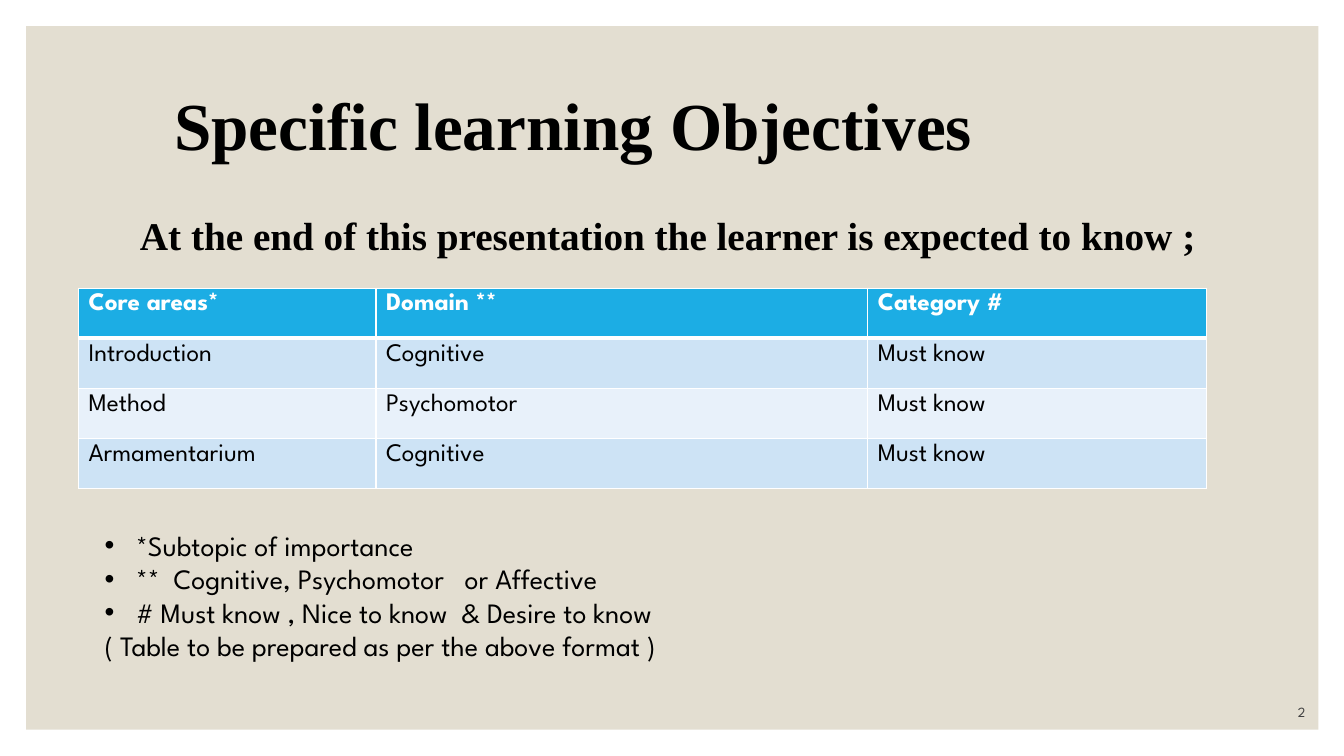
from pptx import Presentation
from pptx import util as u
from pptx.dml.color import RGBColor
from pptx.enum import shapes, text
from pptx.oxml import parse_xml
from pptx.oxml.ns import nsdecls

BLACK, WHITE = "000000", "FFFFFF"
SERIF, SANS = "Times New Roman", "League Spartan"


def colour(value):
    return RGBColor.from_string(value)


def write(para, wording, size=18, font=SANS, ink=BLACK, bold=False):
    span = para.add_run()
    span.text = wording
    span.font.size = u.Pt(size)
    span.font.name = font
    span.font.bold = bold
    span.font.color.rgb = colour(ink)


class Page:
    """Holds the table style and the current slide."""

    header_fill = "1CADE4"
    band_fills = ("CDE3F5", "E8F1FA")
    thin, thick = 1, 3

    def __init__(self, deck):
        self.slide = deck.slides.add_slide(deck.slide_layouts[6])

    def panel(self, left, top, width, height, fill):
        box = self.slide.shapes.add_shape(
            shapes.MSO_SHAPE.RECTANGLE, *map(u.Pt, (left, top, width, height)))
        box.shadow.inherit = False
        box.fill.solid()
        box.fill.fore_color.rgb = colour(fill)
        box.line.fill.background()

    def words(self, left, top, width, height, lines, bullets=0,
              anchor=text.MSO_ANCHOR.TOP, align=text.PP_ALIGN.LEFT,
              spacing=None, **style):
        box = self.slide.shapes.add_textbox(*map(u.Pt, (left, top, width, height)))
        frame = box.text_frame
        frame.word_wrap = True
        frame.vertical_anchor = anchor
        for number, line in enumerate(lines):
            para = frame.add_paragraph() if number else frame.paragraphs[0]
            para.alignment = align
            para.line_spacing = spacing
            write(para, line, **style)
            if number < bullets:
                self.bullet(para)

    def bullet(self, para, indent=22.5):
        properties = para._p.get_or_add_pPr()
        properties.set("marL", str(u.Pt(indent)))
        properties.set("indent", str(-u.Pt(indent)))
        for mark in ('a:buFont {} typeface="Arial"', 'a:buChar {} char="•"'):
            properties.append(parse_xml(f"<{mark.format(nsdecls('a'))}/>"))

    def border(self, cell, side, width):
        cell._tc.get_or_add_tcPr().append(parse_xml(
            f'<a:ln{side} {nsdecls("a")} w="{u.Pt(width)}"><a:solidFill>'
            f'<a:srgbClr val="{WHITE}"/></a:solidFill></a:ln{side}>'))

    def table(self, left, top, widths, row_height, rows):
        grid = self.slide.shapes.add_table(
            len(rows), len(widths), u.Pt(left), u.Pt(top),
            u.Pt(sum(widths)), u.Pt(row_height * len(rows))).table
        for column, width in zip(grid.columns, widths):
            column.width = u.Pt(width)
        for r, row in enumerate(rows):
            header = r == 0
            fill = self.header_fill if header else self.band_fills[(r - 1) % 2]
            # The rule under the header is shared by the first two rows
            weights = {"L": self.thin, "R": self.thin,
                       "T": self.thick if r == 1 else self.thin,
                       "B": self.thick if header else self.thin}
            for c, wording in enumerate(row):
                cell = grid.cell(r, c)
                for side, weight in weights.items():
                    self.border(cell, side, weight)
                cell.fill.solid()
                cell.fill.fore_color.rgb = colour(fill)
                write(cell.text_frame.paragraphs[0], wording,
                      ink=WHITE if header else BLACK, bold=header)


def main():
    deck = Presentation()
    deck.slide_width, deck.slide_height = u.Pt(960), u.Pt(540)
    page = Page(deck)

    # Background panel
    page.panel(18.72, 18.72, 923.04, 502.56, "E3DED1")

    # Title and lead-in
    page.words(117.36, 48.24, 729.36, 87.12, ["Specific learning Objectives"],
               anchor=text.MSO_ANCHOR.MIDDLE, spacing=0.9,
               size=48, font=SERIF, bold=True)
    page.words(92.88, 147.6, 771.12, 41.04,
               ["At the end of this presentation the learner is expected to know ;"],
               size=28, font=SERIF, bold=True)

    # Objectives table
    page.table(56.16, 205.92, (212.4, 351.36, 241.92), 35.8, [
        ("Core areas*", "Domain **", "Category #"),
        ("Introduction", "Cognitive", "Must know"),
        ("Method", "Psychomotor", "Must know"),
        ("Armamentarium", "Cognitive", "Must know"),
    ])

    # Key to the marks
    page.words(67.68, 373.68, 652.32, 104.4, [
        "*Subtopic of importance",
        "**  Cognitive, Psychomotor   or Affective",
        "# Must know , Nice to know  & Desire to know",
        "( Table to be prepared as per the above format )",
    ], bullets=3, size=20)

    # Page number
    page.words(824.4, 496.8, 115.2, 21.6, ["2"], anchor=text.MSO_ANCHOR.BOTTOM,
               align=text.PP_ALIGN.RIGHT, size=10, ink="404040")

    deck.save("out.pptx")


if __name__ == "__main__":
    main()
